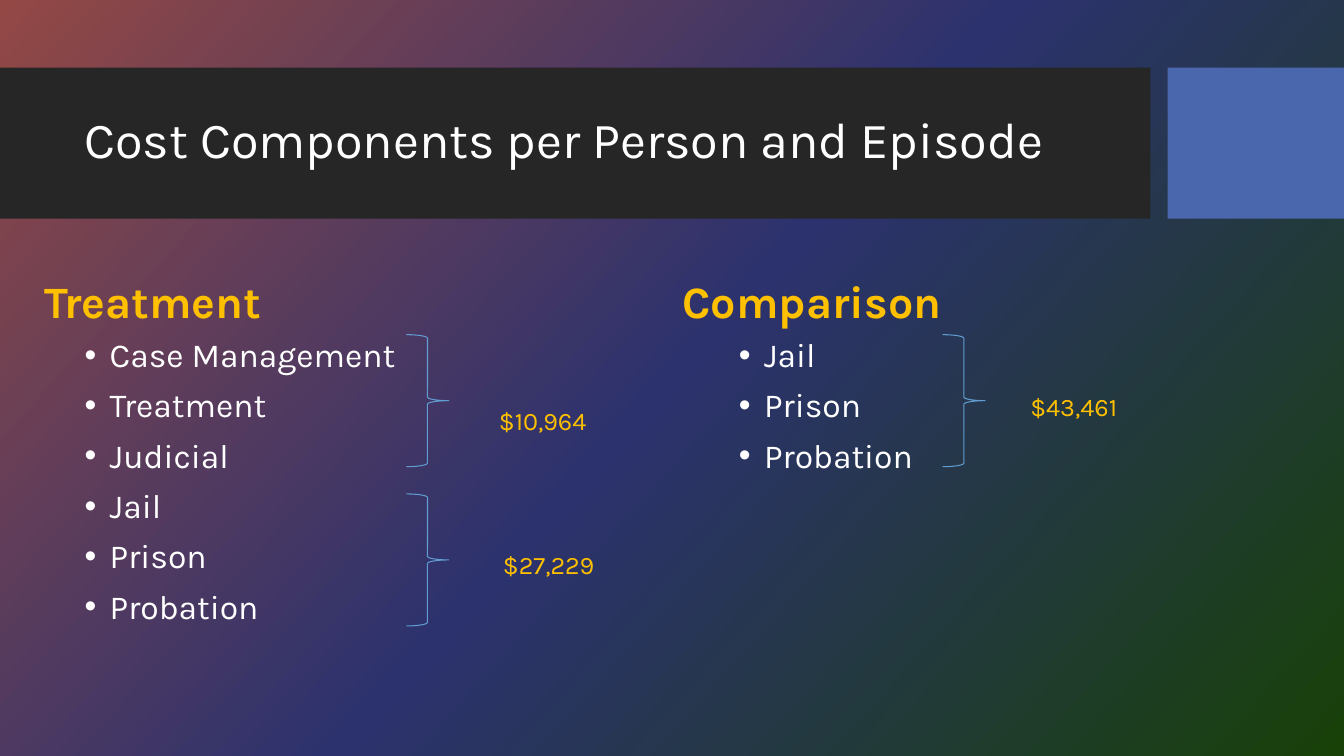
from copy import deepcopy

from lxml import etree
from pptx import Presentation
from pptx.dml.color import RGBColor
from pptx.enum import shapes, text
from pptx.oxml import ns
from pptx.util import Inches, Pt

FONT = "Karla"
WHITE = RGBColor(0xFF, 0xFF, 0xFF)
GOLD = RGBColor(0xFF, 0xC0, 0x00)
CHARCOAL = RGBColor(0x26, 0x26, 0x26)
BLUE = RGBColor(0x4A, 0x66, 0xAC)
BRACE_BLUE = RGBColor(0x62, 0x9D, 0xD1)
BACKGROUND_STOPS = [
    (0, RGBColor(0x93, 0x48, 0x45)),
    (0.5, RGBColor(0x2C, 0x32, 0x6E)),
    (1, RGBColor(0x18, 0x41, 0x08)),
]


def add_bullet(paragraph):
    properties = paragraph._p.get_or_add_pPr()
    properties.set("marL", str(Inches(0.25)))
    properties.set("indent", str(Inches(-0.25)))
    etree.SubElement(properties, ns.qn("a:buFont"), typeface="Arial")
    etree.SubElement(properties, ns.qn("a:buChar"), char="•")


def add_text(slide, box, lines, size=18, color=WHITE, bold=False, bullets=False,
             anchor=text.MSO_ANCHOR.TOP, line_spacing=0.9):
    shape = slide.shapes.add_textbox(*map(Inches, box))
    frame = shape.text_frame
    frame.word_wrap = True
    frame.vertical_anchor = anchor
    for index, line in enumerate(lines):
        paragraph = frame.paragraphs[0] if index == 0 else frame.add_paragraph()
        if bullets:
            add_bullet(paragraph)
        paragraph.line_spacing = line_spacing
        paragraph.space_before = Pt(10 if index else 0)
        run = paragraph.add_run()
        run.text = line
        run.font.name = FONT
        run.font.size = Pt(size)
        run.font.bold = bold
        run.font.color.rgb = color


def add_block(slide, box, color):
    shape = slide.shapes.add_shape(shapes.MSO_SHAPE.RECTANGLE, *map(Inches, box))
    shape.shadow.inherit = False
    shape.fill.solid()
    shape.fill.fore_color.rgb = color
    shape.line.fill.background()


def paint_background(slide):
    fill = slide.background.fill
    fill.gradient()
    fill.gradient_angle = 360 - 42
    stop_list = next(slide._element.iter(ns.qn("a:gsLst")))
    stop_list.append(deepcopy(stop_list[-1]))
    for stop, (position, color) in zip(fill.gradient_stops, BACKGROUND_STOPS):
        stop.position = position
        stop.color.rgb = color


def add_title_band(slide, top, height, title):
    add_block(slide, (0, top, 11.41, height), CHARCOAL)
    add_block(slide, (11.58, top, 1.75, height), BLUE)
    add_text(slide, (0.74, top + 0.15, 10.51, 1.18), [title], size=36,
             anchor=text.MSO_ANCHOR.MIDDLE)


def add_cost_group(slide, left, top, cost, cost_offset):
    """Brace around three components, with their cost beside it."""
    brace = slide.shapes.add_shape(shapes.MSO_SHAPE.RIGHT_BRACE, Inches(left),
                                   Inches(top), Inches(0.42), Inches(1.31))
    brace.shadow.inherit = False
    brace.fill.background()
    brace.line.color.rgb = BRACE_BLUE
    brace.line.width = Pt(0.75)
    across, down = cost_offset
    add_text(slide, (left + across, top + down, 1.28, 0.4), [cost], color=GOLD,
             line_spacing=1)


def add_cost_column(slide, left, top, heading, components, list_indent,
                    brace_indent, costs):
    add_text(slide, (left, top, 4.89, 0.76), [heading], size=32, color=GOLD,
             bold=True, anchor=text.MSO_ANCHOR.BOTTOM)
    list_top = top + 0.76
    add_text(slide, (left + list_indent, list_top, 5.14, 3.18), components,
             size=24, bullets=True)
    for index, (cost, offset) in enumerate(costs):
        add_cost_group(slide, left + brace_indent, list_top + 0.01 + index * 1.58,
                       cost, offset)


def main():
    presentation = Presentation()
    presentation.slide_width = Inches(13.33)
    presentation.slide_height = Inches(7.5)
    slide = presentation.slides.add_slide(presentation.slide_layouts[6])

    paint_background(slide)
    add_title_band(slide, 0.67, 1.5, "Cost Components per Person and Episode")

    # Treatment and comparison columns
    justice = ["Jail", "Prison", "Probation"]
    add_cost_column(slide, 0.34, 2.55, "Treatment",
                    ["Case Management", "Treatment", "Judicial"] + justice,
                    list_indent=0.4, brace_indent=3.69,
                    costs=[("$10,964", (0.82, 0.65)), ("$27,229", (0.86, 0.5))])
    add_cost_column(slide, 6.67, 2.55, "Comparison", justice,
                    list_indent=0.56, brace_indent=2.68,
                    costs=[("$43,461", (0.77, 0.51))])

    presentation.save("out.pptx")


if __name__ == "__main__":
    main()
